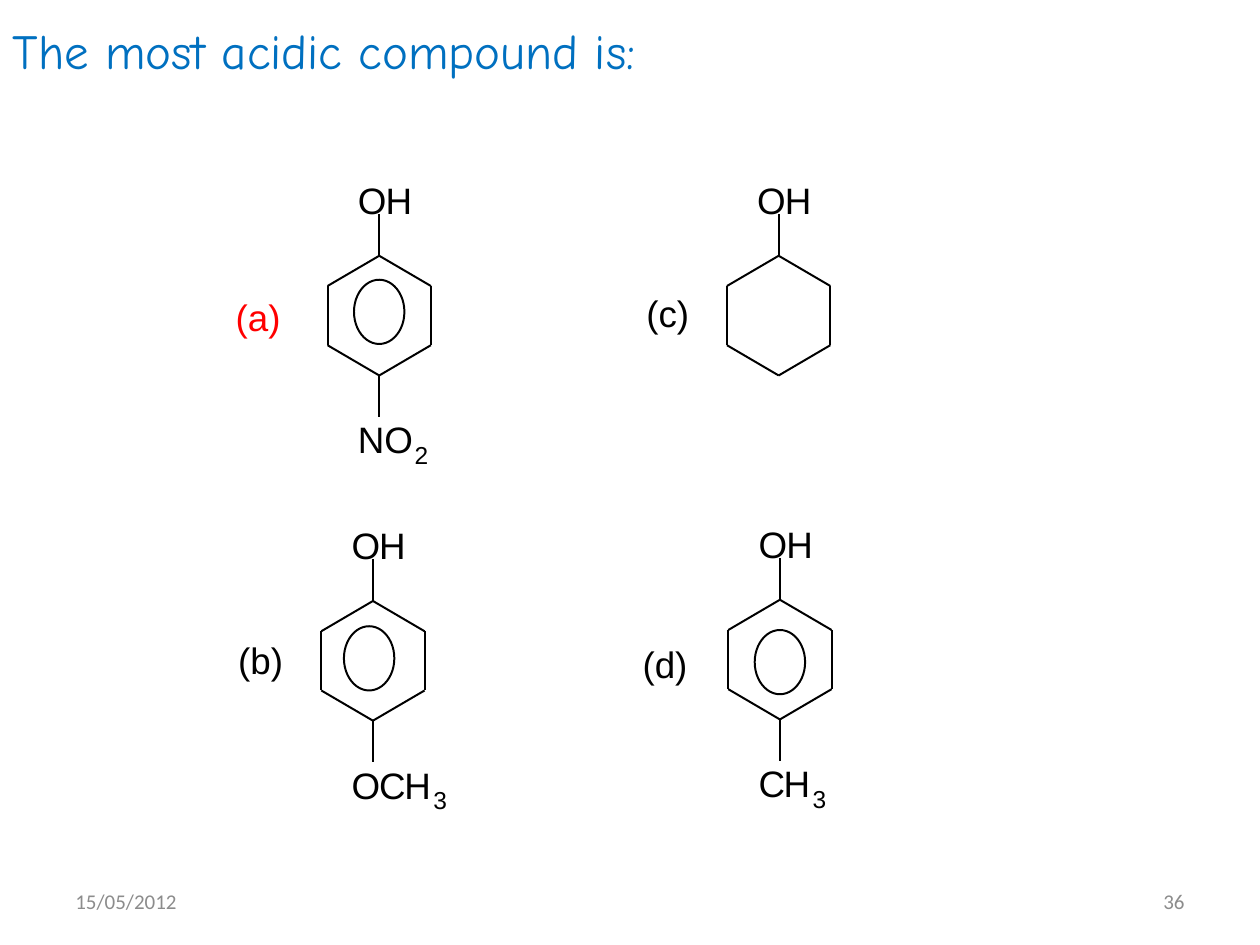
from itertools import pairwise

from lxml import etree
from pptx import Presentation
from pptx.dml.color import RGBColor
from pptx.enum import shapes, text
from pptx.oxml import ns
from pptx.util import Inches, Pt

BLACK = RGBColor(0, 0, 0)
RED = RGBColor(0xFF, 0, 0)
BLUE = RGBColor(0, 0x70, 0xC0)
GREY = RGBColor(0x8C, 0x8C, 0x8C)

HEXAGON = [(0, 0), (0.41, 0.24), (0.41, 0.71), (0, 0.95),
           (-0.41, 0.71), (-0.41, 0.24), (0, 0)]
BOND = 0.33
ADVANCE = {"C": 0.2, "H": 0.21, "N": 0.21, "O": 0.22}

# label, label position, colour, ring apex, circle offset, lower group
COMPOUNDS = [
    ("(a)", (1.87, 2.34), RED, (3.01, 2.03), (-0.2, 0.19), "NO2"),
    ("(c)", (5.13, 2.31), BLACK, (6.18, 2.03), None, None),
    ("(b)", (1.89, 5.06), BLACK, (2.96, 4.77), (-0.23, 0.2), "OCH3"),
    ("(d)", (5.1, 5.09), BLACK, (6.19, 4.76), (-0.2, 0.24), "CH3"),
]


class Sketch:
    """Draws styled titles, text and ring molecules on one slide."""

    def __init__(self, page, line_width=1.13):
        self.page = page
        self.line_width = Pt(line_width)

    def style(self, para, size, font, color, align=text.PP_ALIGN.LEFT):
        para.alignment = align
        para.font.size = Pt(size)
        para.font.name = font
        para.font.color.rgb = color

    def title(self, words, left, top, width, height):
        box = self.page.shapes.title
        box.left, box.top = Inches(left), Inches(top)
        box.width, box.height = Inches(width), Inches(height)
        frame = box.text_frame
        frame.text = words
        frame.vertical_anchor = text.MSO_ANCHOR.TOP
        self.style(frame.paragraphs[0], 28, "Comic Neue", BLUE)

    def footer(self, words, left, align):
        box = self.page.shapes.add_textbox(
            Inches(left), Inches(6.95), Inches(2.33), Inches(0.4))
        frame = box.text_frame
        frame.text = words
        frame.word_wrap = True
        frame.vertical_anchor = text.MSO_ANCHOR.MIDDLE
        self.style(frame.paragraphs[0], 12, "Calibri", GREY, align)

    def caption(self, words, left, top, width, height=0.39, size=21, color=BLACK):
        box = self.page.shapes.add_textbox(
            Inches(left), Inches(top), Inches(width), Inches(height))
        frame = box.text_frame
        frame.margin_left = frame.margin_right = 0
        frame.margin_top = frame.margin_bottom = 0
        frame.word_wrap = True
        frame.text = words
        self.style(frame.paragraphs[0], size, "Arial", color)

    def line(self, start, end):
        bond = self.page.shapes.add_connector(
            shapes.MSO_CONNECTOR.STRAIGHT, *map(Inches, (*start, *end)))
        bond.line.color.rgb = BLACK
        bond.line.width = self.line_width
        etree.SubElement(bond._element.spPr, ns.qn("a:effectLst"))

    def circle(self, left, top):
        ring = self.page.shapes.add_shape(
            shapes.MSO_SHAPE.OVAL,
            Inches(left), Inches(top), Inches(0.4), Inches(0.51))
        ring.shadow.inherit = False
        ring.fill.background()
        ring.line.color.rgb = BLACK
        ring.line.width = self.line_width

    def formula(self, symbols, left, top):
        for symbol in symbols:
            if symbol.isdigit():
                self.caption(symbol, left + 0.02, top + 0.18, 0.19, 0.25, 14)
            else:
                self.caption(symbol, left, top, 0.35)
                left += ADVANCE[symbol]

    def molecule(self, apex, circle, group):
        x, y = apex
        corners = [(x + dx, y + dy) for dx, dy in HEXAGON]
        for start, end in pairwise(corners):
            self.line(start, end)
        self.line(apex, (x, y - BOND))
        self.formula("OH", x - 0.17, y - 0.62)
        if circle:
            self.circle(x + circle[0], y + circle[1])
        if group:
            bottom = y + 0.95
            self.line((x, bottom), (x, bottom + BOND))
            self.formula(group, x - 0.17, bottom + BOND)


def main():
    deck = Presentation()
    deck.slide_width, deck.slide_height = Inches(10), Inches(7.5)
    sketch = Sketch(deck.slides.add_slide(deck.slide_layouts[5]))
    sketch.title("The most acidic compound is:", 0, 0.11, 5.52, 1.04)
    sketch.footer("15/05/2012", 0.5, text.PP_ALIGN.LEFT)
    sketch.footer("36", 7.17, text.PP_ALIGN.RIGHT)
    for label, place, color, apex, circle, group in COMPOUNDS:
        sketch.molecule(apex, circle, group)
        sketch.caption(label, *place, 0.48, color=color)
    deck.save("out.pptx")


if __name__ == "__main__":
    main()
